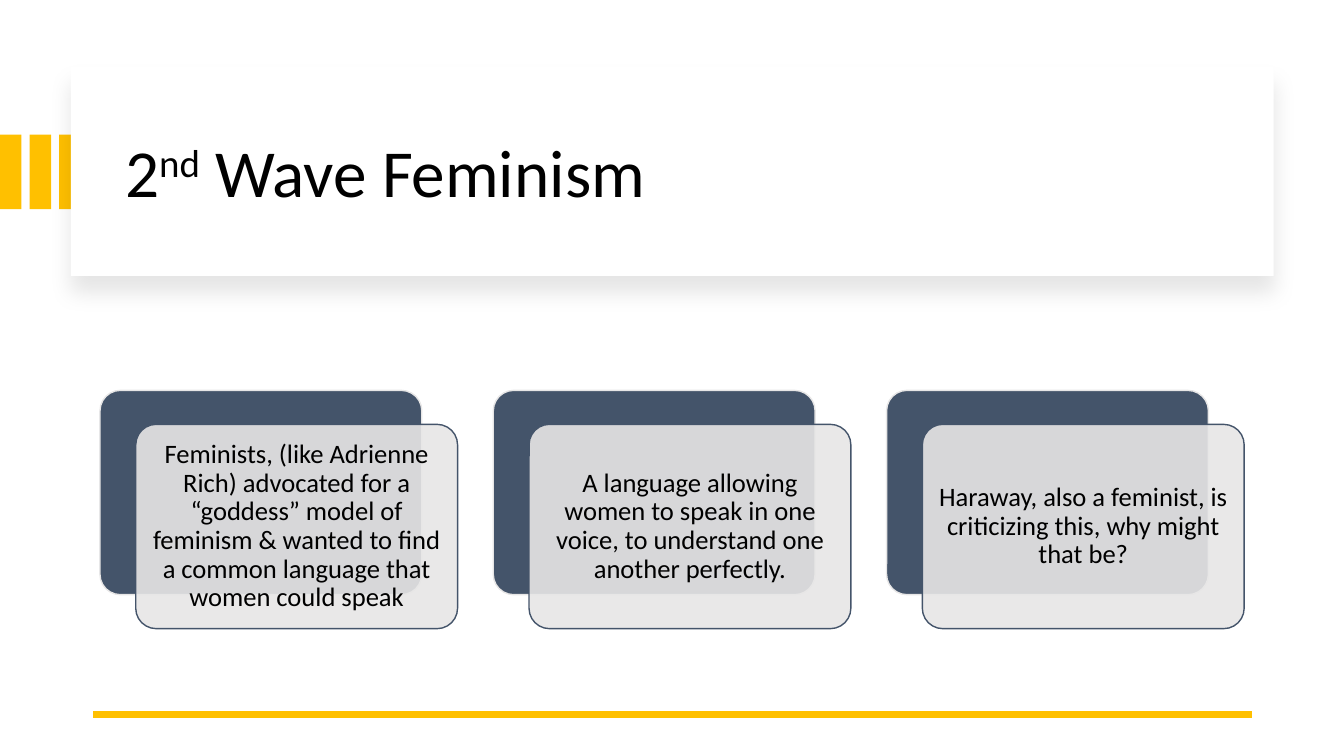
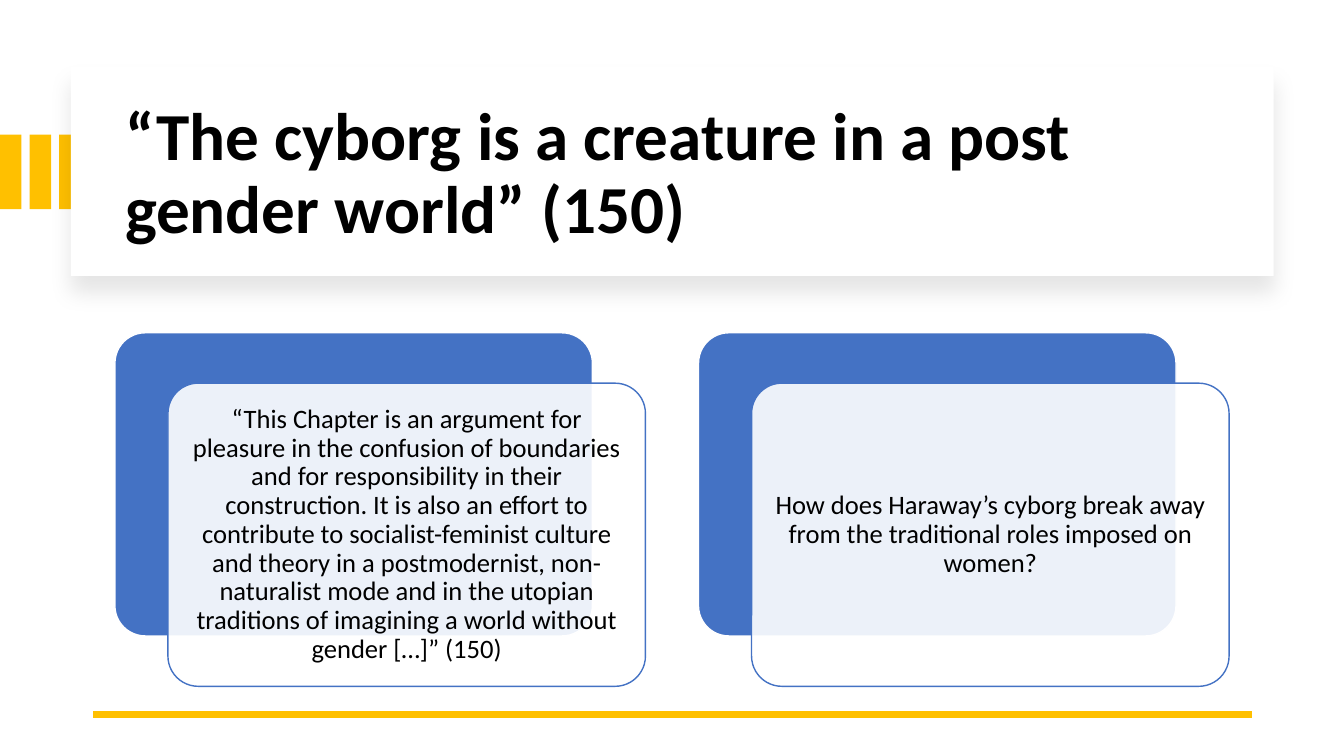
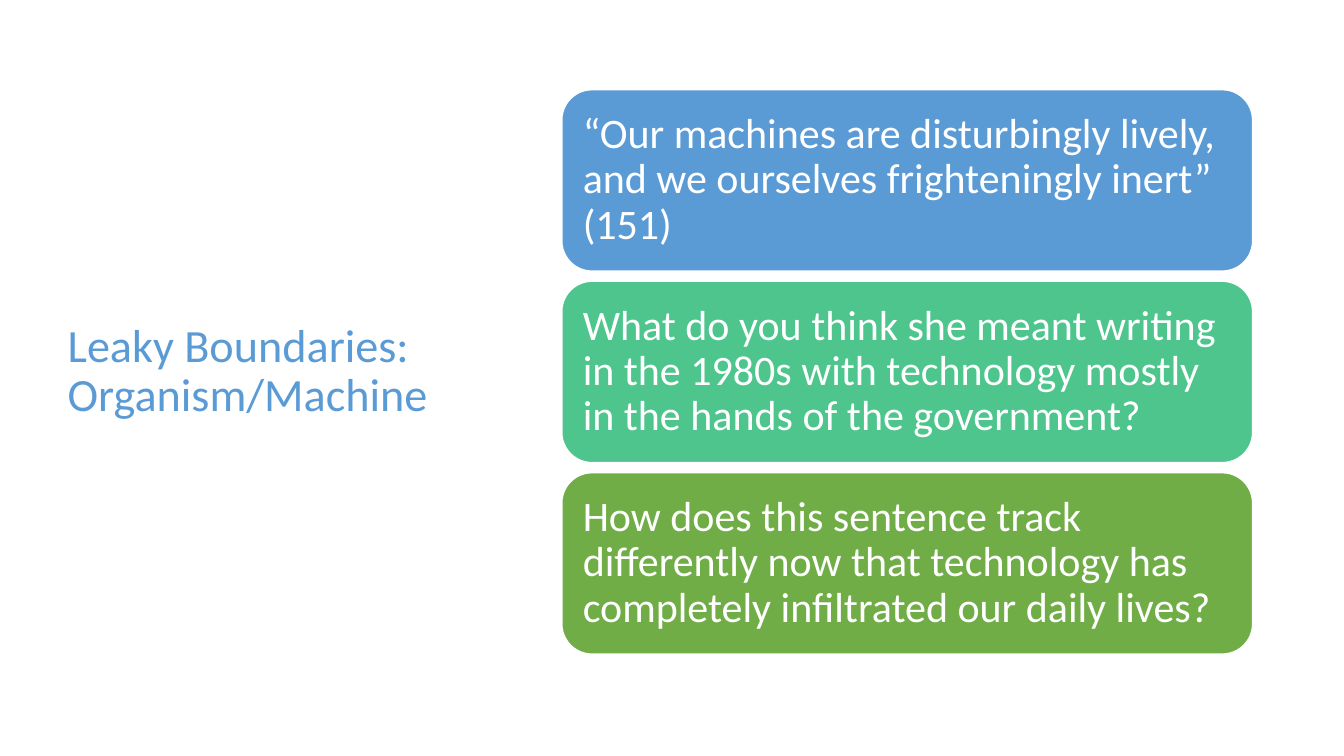
"""Build three slides on cyborg feminism with title cards and rounded panels."""
from dataclasses import dataclass

from lxml.etree import SubElement
from pptx import Presentation
from pptx.dml.color import RGBColor
from pptx.enum.shapes import MSO_CONNECTOR as Line, MSO_SHAPE as Preset
from pptx.enum.text import MSO_ANCHOR as Anchor, MSO_AUTO_SIZE as AutoSize, PP_ALIGN as Align
from pptx.oxml.ns import qn
from pptx.util import Inches, Pt

WIDTH, HEIGHT = Inches(13.33), Inches(7.5)
TITLE_ONLY = 5


@dataclass(frozen=True)
class Theme:
    """Hold the colours, font and type sizes of all slides."""
    font: str = "Calibri"
    black: str = "000000"
    white: str = "FFFFFF"
    gold: str = "FFC000"
    slate: str = "44546A"
    mist: str = "E7E6E6"
    royal: str = "4472C4"
    sky: str = "5B9BD5"
    mint: str = "4DC58D"
    leaf: str = "70AD47"
    title_size: int = 48
    side_title_size: int = 33
    panel_size: int = 30
    card_size: int = 19
    line_spacing: float = 0.9


THEME = Theme()


def across(percent):
    """Return a share of the slide width."""
    return round(WIDTH * percent / 100)


def down(percent):
    """Return a share of the slide height."""
    return round(HEIGHT * percent / 100)


def area(left, top, width, height):
    """Return a box given as percentages of the slide."""
    return across(left), down(top), across(width), down(height)


def write(shape, text, size, color=THEME.black, bold=False, align=Align.LEFT, inset=0.1):
    """Write one paragraph, raising the parts between carets."""
    frame = shape.text_frame
    frame.word_wrap = True
    frame.auto_size = AutoSize.NONE
    frame.vertical_anchor = Anchor.MIDDLE
    frame.margin_left = frame.margin_right = Inches(inset)
    frame.margin_top = frame.margin_bottom = Inches(inset)
    paragraph = frame.paragraphs[0]
    paragraph.alignment = align
    paragraph.line_spacing = THEME.line_spacing
    for index, part in enumerate(text.split("^")):
        run = paragraph.add_run()
        run.text = part
        run.font.name = THEME.font
        run.font.size = Pt(size)
        run.font.bold = bold
        run.font.color.rgb = RGBColor.from_string(color)
        if index % 2:
            run.font._element.set("baseline", "30000")


def add_block(slide, box, fill, preset=Preset.RECTANGLE, outline=None, opacity=100, corner=None):
    """Add a flat filled shape."""
    block = slide.shapes.add_shape(preset, *box)
    block.shadow.inherit = False
    block.fill.solid()
    block.fill.fore_color.rgb = RGBColor.from_string(fill)
    if outline:
        block.line.color.rgb = RGBColor.from_string(outline)
        block.line.width = Pt(1)
    else:
        block.line.fill.background()
    if corner:
        block.adjustments[0] = corner
    if opacity < 100:
        tint = block.element.spPr.find(qn("a:solidFill"))[0]
        SubElement(tint, qn("a:alpha"), val=str(opacity * 1000))
    return block


def cast_shadow(block, blur, distance, opacity):
    """Give a block a soft shadow below it."""
    effects = block.element.spPr.find(qn("a:effectLst"))
    shadow = SubElement(effects, qn("a:outerShdw"), blurRad=str(Pt(blur)),
                        dist=str(Pt(distance)), dir="5400000", rotWithShape="0")
    tint = SubElement(shadow, qn("a:srgbClr"), val=THEME.black)
    SubElement(tint, qn("a:alpha"), val=str(opacity * 1000))


def add_title(slide, text, box, size=THEME.title_size, **style):
    """Place the title placeholder in front of the shapes so far."""
    title = slide.shapes.title
    title.left, title.top, title.width, title.height = box
    slide.shapes._spTree.append(title.element)
    write(title, text, size, **style)


def add_rule(slide):
    """Draw the gold line at the foot."""
    rule = slide.shapes.add_connector(Line.STRAIGHT, across(93.15), down(94.53),
                                      across(6.9), down(94.53))
    rule.line.color.rgb = RGBColor.from_string(THEME.gold)
    rule.line.width = Pt(4.5)
    SubElement(rule.element.spPr, qn("a:effectLst"))


def add_banner(slide, text, **style):
    """Add the gold stripes, raised title card, title and foot line."""
    for index in range(3):
        add_block(slide, area(2.2 * index, 17.8, 1.6, 9.87), THEME.gold)
    card = add_block(slide, area(5.27, 8.9, 89.5, 27.6), THEME.white)
    cast_shadow(card, blur=15, distance=11, opacity=10)
    add_title(slide, text, area(8.55, 11.87, 83.5, 22.67), **style)
    add_rule(slide)


def add_cards(slide, texts, left, span, dark, light):
    """Spread pairs of overlapping cards evenly over a span."""
    width = round(across(span) * 9 / (11 * len(texts) - 1))
    height = round(width * 0.635)
    shift = round(width / 9)
    drop = round(shift * 0.95)
    top = down(67.4) - (height + drop) // 2
    for index, text in enumerate(texts):
        start = across(left) + index * (width + 2 * shift)
        add_block(slide, (start, top, width, height), dark,
                  Preset.ROUNDED_RECTANGLE, outline=light, corner=0.1)
        front = add_block(slide, (start + shift, top + drop, width, height), light,
                          Preset.ROUNDED_RECTANGLE, outline=dark, opacity=90, corner=0.1)
        write(front, text, THEME.card_size, align=Align.CENTER, inset=0.08)


def add_panels(slide, panels):
    """Stack coloured panels in the right column."""
    for index, (color, text) in enumerate(panels):
        panel = add_block(slide, area(41.8, 11.87 + 25.33 * index, 51.4, 24), color,
                          Preset.ROUNDED_RECTANGLE, outline=THEME.white)
        write(panel, text, THEME.panel_size, color=THEME.white, inset=0.12)


def main():
    """Build and save the slides."""
    deck = Presentation()
    deck.slide_width, deck.slide_height = WIDTH, HEIGHT
    layout = deck.slide_layouts[TITLE_ONLY]

    second_wave = deck.slides.add_slide(layout)
    add_banner(second_wave, "2^nd^ Wave Feminism")
    add_cards(second_wave, [
        "Feminists, (like Adrienne Rich) advocated for a “goddess” model of feminism "
        "& wanted to find a common language that women could speak",
        "A language allowing women to speak in one voice, to understand one another perfectly.",
        "Haraway, also a feminist, is criticizing this, why might that be?",
    ], left=7.44, span=85.13, dark=THEME.slate, light=THEME.mist)

    post_gender = deck.slides.add_slide(layout)
    add_banner(post_gender, "“The cyborg is a creature in a post gender world” (150)", bold=True)
    add_cards(post_gender, [
        "“This Chapter is an argument for pleasure in the confusion of boundaries and for "
        "responsibility in their construction. It is also an effort to contribute to "
        "socialist-feminist culture and theory in a postmodernist, non-naturalist mode and "
        "in the utopian traditions of imagining a world without gender […]” (150)",
        "How does Haraway’s cyborg break away from the traditional roles imposed on women?",
    ], left=8.55, span=82.9, dark=THEME.royal, light=THEME.white)

    boundaries = deck.slides.add_slide(layout)
    add_title(boundaries, "Leaky Boundaries: Organism/Machine", area(4.28, 9.07, 31.2, 80.27),
              size=THEME.side_title_size, color=THEME.sky)
    add_panels(boundaries, [
        (THEME.sky, "“Our machines are disturbingly lively, and we ourselves "
                    "frighteningly inert” (151)"),
        (THEME.mint, "What do you think she meant writing in the 1980s with technology "
                     "mostly in the hands of the government?"),
        (THEME.leaf, "How does this sentence track differently now that technology has "
                     "completely infiltrated our daily lives?"),
    ])

    deck.save("out.pptx")


if __name__ == "__main__":
    main()
